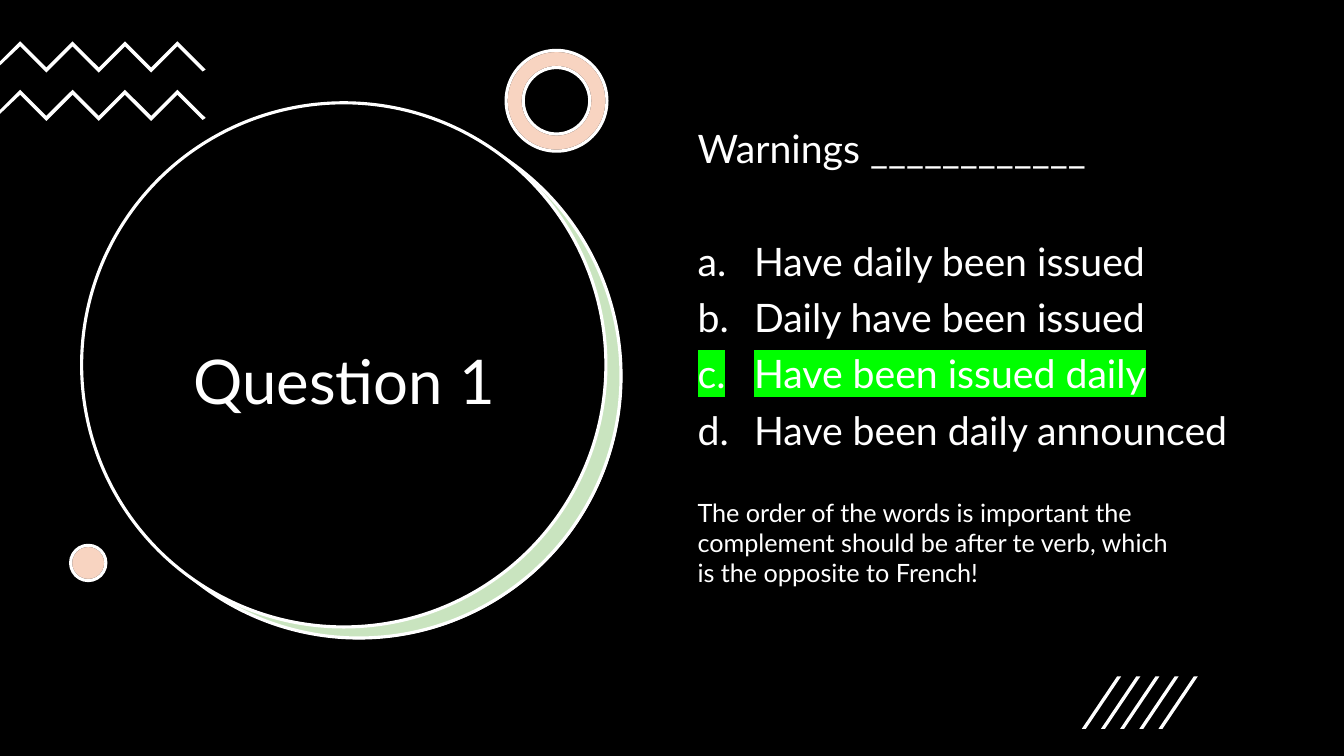
from dataclasses import dataclass

from lxml import etree
from pptx import Presentation
from pptx.dml.color import RGBColor
from pptx.enum.shapes import MSO_SHAPE
from pptx.enum.text import MSO_ANCHOR, MSO_AUTO_SIZE, PP_ALIGN
from pptx.oxml.ns import qn
from pptx.util import Pt

RECT, OVAL, DONUT = MSO_SHAPE.RECTANGLE, MSO_SHAPE.OVAL, MSO_SHAPE.DONUT
CENTER, MIDDLE, GROW = PP_ALIGN.CENTER, MSO_ANCHOR.MIDDLE, MSO_AUTO_SIZE.SHAPE_TO_FIT_TEXT

PX = 9144  # 100 px to the inch
WIDTH, HEIGHT = 1333, 750


@dataclass(frozen=True)
class Theme:
    font: str = "Lato"
    back: str = "000000"
    ink: str = "FFFFFF"
    green: str = "4EA72E"
    orange: str = "E97132"
    marker: str = "00FF00"
    tint: int = 30
    outline: float = 2.25
    title: int = 44
    body: int = 28
    note: int = 18


THEME = Theme()
QUESTION = "Warnings ____________"
OPTIONS = ["Have daily been issued", "Daily have been issued",
           "Have been issued daily", "Have been daily announced"]
ANSWER = 2
NOTE = ("The order of the words is important the complement should be after te verb, "
        "which is the opposite to French!")


def rgb(value):
    return RGBColor.from_string(value)


def paint(shape, fill, line=None, opacity=100):
    shape.shadow.inherit = False
    shape.fill.solid()
    shape.fill.fore_color.rgb = rgb(fill)
    if opacity < 100:
        color = shape._element.spPr.find(qn("a:solidFill")).find(qn("a:srgbClr"))
        etree.SubElement(color, qn("a:alpha"), val=str(opacity * 1000))
    if line:
        shape.line.color.rgb = rgb(line)
        shape.line.width = Pt(THEME.outline)
    else:
        shape.line.fill.background()


def add_preset(s, kind, box, fill, line=None, opacity=100):
    shape = s.shapes.add_shape(kind, *(v * PX for v in box))
    paint(shape, fill, line, opacity)
    return shape


def add_outline(s, points):
    builder = s.shapes.build_freeform(*points[0], scale=PX)
    builder.add_line_segments(points[1:], close=True)
    paint(builder.convert_to_shape(), THEME.ink)


def add_text_box(s, box, **frame):
    tf = s.shapes.add_textbox(*(v * PX for v in box)).text_frame
    tf.word_wrap = True
    for name, value in frame.items():
        setattr(tf, name, value)
    return tf


def write(p, text, size, **layout):
    for name, value in layout.items():
        setattr(p, name, value)
    r = p.add_run()
    r.text = text
    r.font.name, r.font.size = THEME.font, Pt(size)
    r.font.color.rgb = rgb(THEME.ink)
    return r


def add_lettered(p, indent):
    pPr = p._p.get_or_add_pPr()
    pPr.set("marL", str(indent * PX))
    pPr.set("indent", str(-indent * PX))
    etree.SubElement(pPr, qn("a:buAutoNum"), type="alphaLcPeriod")


def highlight(r, color):
    mark = etree.Element(qn("a:highlight"))
    etree.SubElement(mark, qn("a:srgbClr"), val=color)
    r._r.get_or_add_rPr().find(qn("a:solidFill")).addnext(mark)


def title_disc(s, x, y, size):
    """A black disc holding the title, over a tinted disc that shows as a crescent."""
    add_preset(s, OVAL, (x + 16, y + 12, size, size), THEME.ink)
    add_preset(s, OVAL, (x + 15, y + 11, size, size), THEME.green, THEME.ink, THEME.tint)
    add_preset(s, OVAL, (x, y, size, size), THEME.back, THEME.ink)
    tf = add_text_box(s, (x + 40, y + 103, 441, 352), vertical_anchor=MIDDLE)
    write(tf.paragraphs[0], "Question 1", THEME.title, alignment=CENTER, line_spacing=0.9)


def zigzag(s, x, y):
    """A band running in from the left edge, with its lower side 5 px below the upper."""
    upper = [(x + 20 + 26 * i, y + 26 * (i % 2)) for i in range(7)]
    lower = [(px, py + 5) for px, py in reversed(upper)]
    add_outline(s, upper + [(x + 204, y + 28), (x + 201, y + 30)]
                + lower + [(x, y + 24), (x, y + 20)])


def tinted_accent(s, kind, x, y, size):
    box = (x, y, size, size)
    base = add_preset(s, kind, box, THEME.ink, THEME.back)
    tint = add_preset(s, kind, box, THEME.orange, THEME.ink, THEME.tint)
    if kind == DONUT:
        base.adjustments[0] = tint.adjustments[0] = 0.17


def slashes(s, x, y, count=5):
    for left in range(x, x + 19 * count, 19):
        add_outline(s, [(left + 4, y + 52), (left, y + 52), (left + 35, y), (left + 39, y)])


def question(s, x, y, w, h):
    tf = add_text_box(s, (x, y, w, h))
    write(tf.paragraphs[0], QUESTION, THEME.body, line_spacing=0.9, space_before=Pt(10))
    for i, option in enumerate(OPTIONS):
        p = tf.add_paragraph()
        r = write(p, option, THEME.body, line_spacing=0.9,
                  space_before=Pt(10 if i else 50))
        add_lettered(p, 56)
        if i == ANSWER:
            highlight(r, THEME.marker)


def explanation(s, x, y, w, h):
    tf = add_text_box(s, (x, y, w, h), auto_size=GROW)
    write(tf.paragraphs[0], NOTE, THEME.note)


def question_slide(prs):
    s = prs.slides.add_slide(prs.slide_layouts[6])
    add_preset(s, RECT, (0, 0, WIDTH, HEIGHT), THEME.back)
    title_disc(s, 81, 102, 520)
    for y in (41, 89):
        zigzag(s, 0, y)
    tinted_accent(s, DONUT, 502, 50, 100)
    tinted_accent(s, OVAL, 70, 541, 35)
    question(s, 682, 124, 571, 356)
    slashes(s, 1073, 671)
    explanation(s, 682, 488, 507, 101)


def main():
    prs = Presentation()
    prs.slide_width, prs.slide_height = WIDTH * PX, HEIGHT * PX
    question_slide(prs)
    prs.save("out.pptx")


if __name__ == "__main__":
    main()
